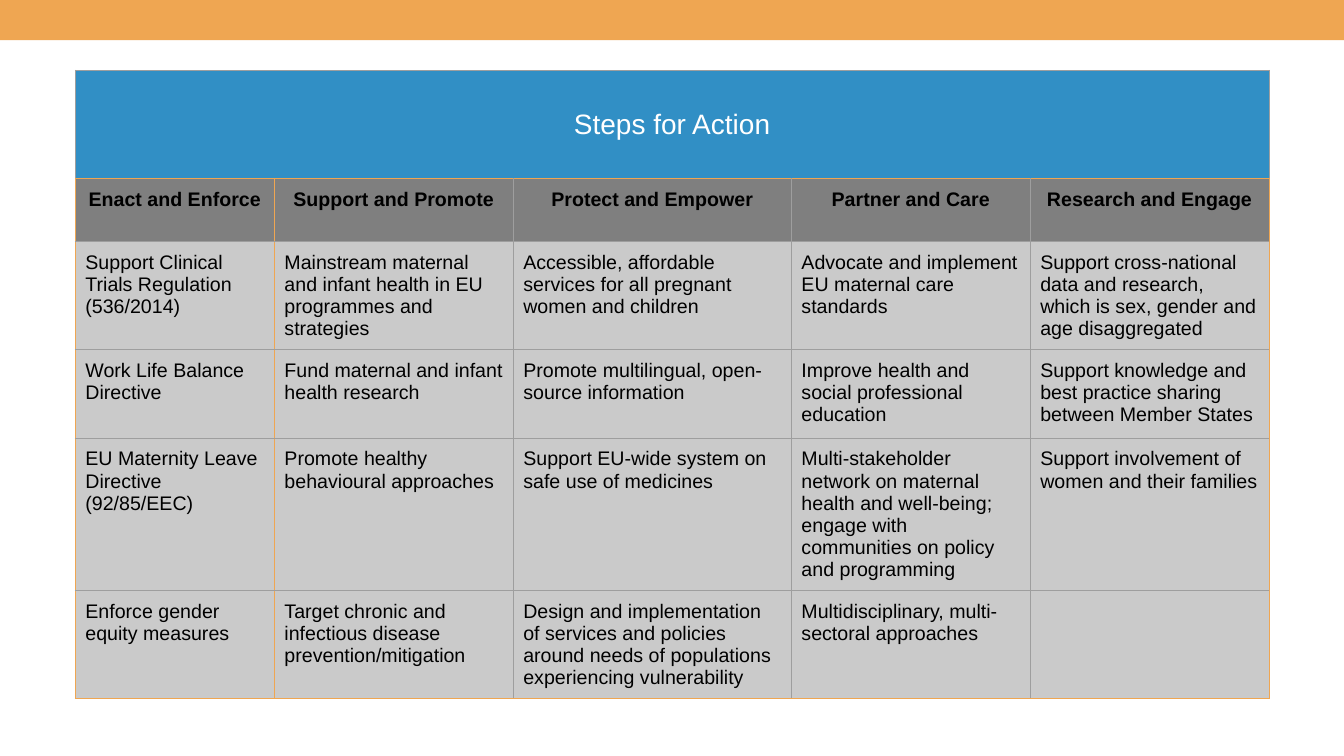
from pptx import Presentation
from pptx.dml.color import RGBColor
from pptx.enum.shapes import MSO_SHAPE as Shape
from pptx.enum.text import MSO_ANCHOR as Anchor, PP_ALIGN as Align
from pptx.oxml import parse_xml
from pptx.oxml.ns import nsdecls
from pptx.util import Pt

ORANGE = RGBColor(0xEF, 0xA6, 0x52)
BLUE = RGBColor(0x31, 0x8F, 0xC5)
DARK = RGBColor(0x7F, 0x7F, 0x7F)
LIGHT = RGBColor(0xCA, 0xCA, 0xCA)
GREY = RGBColor(0x9E, 0x9E, 0x9E)
BLACK = RGBColor(0, 0, 0)
WHITE = RGBColor(0xFF, 0xFF, 0xFF)

WIDTHS = [142.3, 170.7, 198.8, 170.7, 170.7]
HEIGHTS = [77.6, 44.6, 63.2, 63.2, 63.2, 63.2]
TITLE = "Steps for Action"
HEADS = ["Enact and Enforce", "Support and Promote", "Protect and Empower",
         "Partner and Care", "Research and Engage"]
STEPS = [
    ["Support Clinical Trials Regulation (536/2014)",
     "Mainstream maternal and infant health in EU programmes and strategies",
     "Accessible, affordable services for all pregnant women and children",
     "Advocate and implement EU maternal care standards",
     "Support cross-national data and research, which is sex, gender and age disaggregated"],
    ["Work Life Balance Directive",
     "Fund maternal and infant health research",
     "Promote multilingual, open-source information",
     "Improve health and social professional education",
     "Support knowledge and best practice sharing between Member States"],
    ["EU Maternity Leave Directive (92/85/EEC)",
     "Promote healthy behavioural approaches",
     "Support EU-wide system on safe use of medicines",
     "Multi-stakeholder network on maternal health and well-being; "
     "engage with communities on policy and programming",
     "Support involvement of women and their families"],
    ["Enforce gender equity measures",
     "Target chronic and infectious disease prevention/mitigation",
     "Design and implementation of services and policies around needs of "
     "populations experiencing vulnerability",
     "Multidisciplinary, multi-sectoral approaches",
     ""],
]


def write(cell, text, size=14, color=BLACK, bold=False, align=Align.LEFT):
    """Put formatted text in a cell."""
    para = cell.text_frame.paragraphs[0]
    para.text = text
    para.alignment = align
    font = para.font
    font.name, font.size, font.bold = "Arial", Pt(size), bold
    font.color.rgb = color
    for run in para.runs:
        run.font.name, run.font.size, run.font.bold = "Arial", Pt(size), bold
        run.font.color.rgb = color


def paint(cell, fill, anchor=Anchor.TOP):
    """Set the fill, margins and anchor of a cell."""
    cell.fill.solid()
    cell.fill.fore_color.rgb = fill
    cell.margin_left = cell.margin_right = Pt(7.2)
    cell.margin_top = cell.margin_bottom = Pt(7.2)
    cell.vertical_anchor = anchor


def edge(cell, colors):
    """Draw the left, right, top and bottom lines of a cell."""
    props = cell._tc.get_or_add_tcPr()
    for index, (side, color) in enumerate(zip("LRTB", colors)):
        props.insert(index, parse_xml(
            f'<a:ln{side} {nsdecls("a")} w="{Pt(0.75)}"><a:solidFill>'
            f'<a:srgbClr val="{color}"/></a:solidFill></a:ln{side}>'))


def lines(row, col):
    """Choose the line colours for a place in the table."""
    if row == 0:
        return GREY, GREY, GREY, ORANGE
    marks = (col < 2, col in (0, len(WIDTHS) - 1),
             row == 1, row == len(HEIGHTS) - 1)
    return [ORANGE if mark else GREY for mark in marks]


def add_bar(slide, width):
    """Add the band along the top of the slide."""
    bar = slide.shapes.add_shape(Shape.RECTANGLE, 0, 0, width, Pt(28.8))
    bar.shadow.inherit = False
    bar.fill.solid()
    bar.fill.fore_color.rgb = ORANGE
    bar.line.fill.background()


def add_grid(slide):
    """Add the table of steps."""
    table = slide.shapes.add_table(
        len(HEIGHTS), len(WIDTHS), Pt(53.8), Pt(50.2),
        Pt(sum(WIDTHS)), Pt(sum(HEIGHTS))).table
    table.first_row = table.horz_banding = False
    for col, width in zip(table.columns, WIDTHS):
        col.width = Pt(width)
    for row, height in zip(table.rows, HEIGHTS):
        row.height = Pt(height)
    for r in range(len(HEIGHTS)):
        for c in range(len(WIDTHS)):
            cell = table.cell(r, c)
            paint(cell, BLUE if r == 0 else DARK if r == 1 else LIGHT,
                  Anchor.TOP if r else Anchor.MIDDLE)
            edge(cell, lines(r, c))
            if r == 1:
                write(cell, HEADS[c], bold=True, align=Align.CENTER)
            elif r > 1:
                write(cell, STEPS[r - 2][c])
    title = table.cell(0, 0)
    title.merge(table.cell(0, len(WIDTHS) - 1))
    write(title, TITLE, size=20, color=WHITE, align=Align.CENTER)


def main():
    """Build and save the slide."""
    deck = Presentation()
    deck.slide_width, deck.slide_height = Pt(960.48), Pt(540)
    slide = deck.slides.add_slide(deck.slide_layouts[6])
    add_bar(slide, deck.slide_width)
    add_grid(slide)
    deck.save("out.pptx")


if __name__ == "__main__":
    main()
